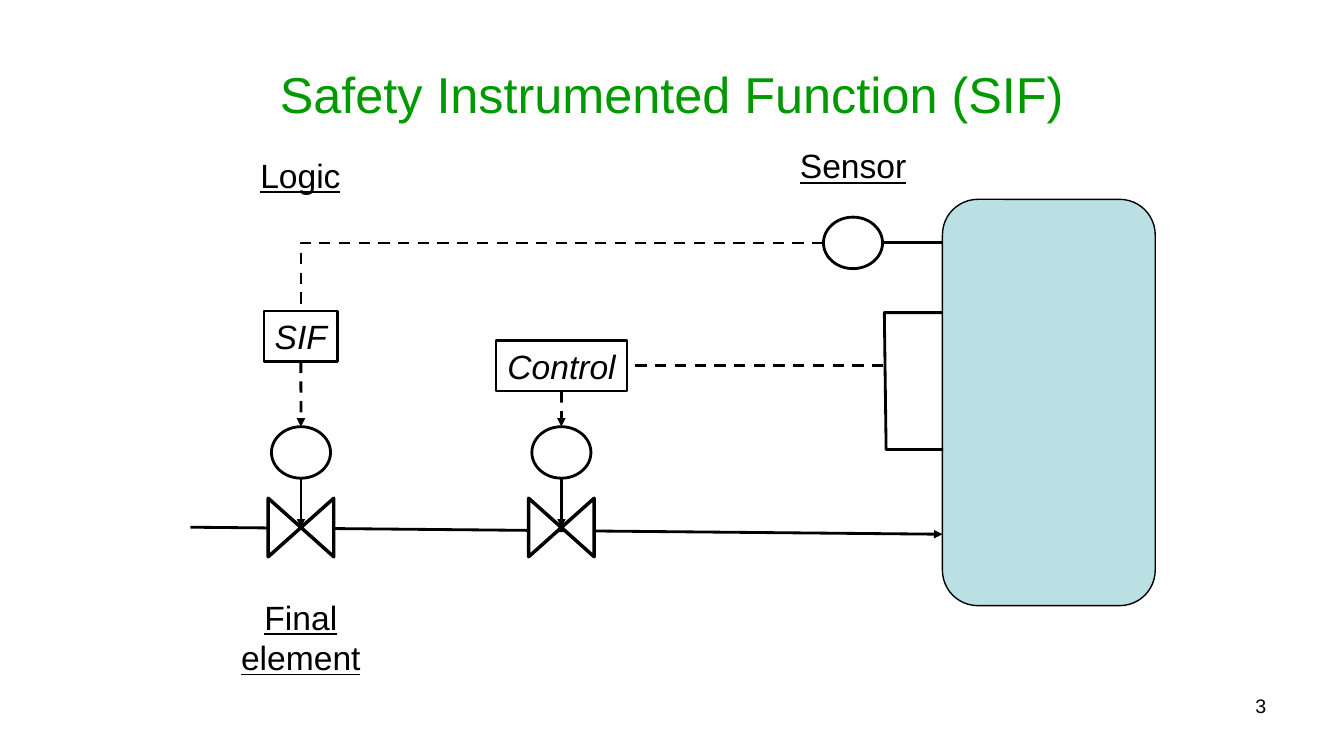
from lxml import etree
from pptx import Presentation
from pptx.dml.color import RGBColor
from pptx.enum.dml import MSO_LINE
from pptx.enum.shapes import MSO_CONNECTOR as CXN, MSO_SHAPE as SHAPE
from pptx.enum.text import MSO_ANCHOR as ANCHOR, MSO_AUTO_SIZE as AUTO, PP_ALIGN as ALIGN
from pptx.oxml.ns import qn
from pptx.util import Pt

BLACK, WHITE, GREEN, TEAL = "000000", "FFFFFF", "009900", "BBE0E3"


def rgb(code):
    return RGBColor.from_string(code)


class Diagram:
    """Holds the slide and its style, with one method per kind of element."""

    def __init__(self, slide, font="Arial", ink=BLACK):
        self.s, self.font, self.ink = slide, font, ink

    def set_text(self, sp, text, size=24, color=None, align=ALIGN.CENTER, italic=None, underline=None):
        tf = sp.text_frame
        tf.text = text
        p = tf.paragraphs[0]
        p.alignment = align
        f = p.runs[0].font
        f.name, f.size, f.italic, f.underline = self.font, Pt(size), italic, underline
        f.color.rgb = rgb(color or self.ink)
        return tf

    def title(self, text, x, y, w, h):
        sp = self.s.shapes.title
        sp.left, sp.top, sp.width, sp.height = Pt(x), Pt(y), Pt(w), Pt(h)
        tf = self.set_text(sp, text, 36, GREEN)
        tf.vertical_anchor = ANCHOR.MIDDLE

    def text(self, text, x, y, w, h, wrap=False, **style):
        sp = self.s.shapes.add_textbox(Pt(x), Pt(y), Pt(w), Pt(h))
        tf = self.set_text(sp, text, **style)
        tf.word_wrap, tf.auto_size = wrap, AUTO.SHAPE_TO_FIT_TEXT

    def outline(self, sp, width, fill=None):
        sp.shadow.inherit = False
        sp.line.color.rgb, sp.line.width = rgb(self.ink), Pt(width)
        if fill:
            sp.fill.solid()
            sp.fill.fore_color.rgb = rgb(fill)
        else:
            sp.fill.background()
        return sp

    def shape(self, kind, x, y, w, h, width=2, fill=WHITE):
        sp = self.s.shapes.add_shape(kind, Pt(x), Pt(y), Pt(w), Pt(h))
        return self.outline(sp, width, fill)

    def box(self, text, x, y, w, h, wrap=True):
        sp = self.shape(SHAPE.RECTANGLE, x, y, w, h, 1.75, None)
        tf = self.set_text(sp, text, italic=True)
        tf.word_wrap, tf.auto_size = wrap, AUTO.SHAPE_TO_FIT_TEXT
        return sp

    def polyline(self, points, width=2):
        start, *rest = [(Pt(x), Pt(y)) for x, y in points]
        builder = self.s.shapes.build_freeform(*start)
        builder.add_line_segments(rest, close=False)
        self.outline(builder.convert_to_shape(), width)

    def line(self, x1, y1, x2, y2, dash=False, arrow=False, kind=CXN.STRAIGHT):
        c = self.s.shapes.add_connector(kind, Pt(x1), Pt(y1), Pt(x2), Pt(y2))
        c.line.color.rgb, c.line.width = rgb(self.ink), Pt(2)
        if dash:
            c.line.dash_style = MSO_LINE.DASH
        props = c._element.spPr
        if arrow:
            etree.SubElement(props.find(qn("a:ln")), qn("a:tailEnd"), type="triangle")
        etree.SubElement(props, qn("a:effectLst"))
        return c

    def corner(self, x1, y1, x2, y2):
        c = self.line(x1, y1, x2, y2, dash=True, kind=CXN.ELBOW)
        c._element.spPr.find(qn("a:prstGeom")).set("prst", "bentConnector2")


def main():
    prs = Presentation()
    prs.slide_width, prs.slide_height = Pt(960), Pt(540)
    d = Diagram(prs.slides.add_slide(prs.slide_layouts[5]))
    sif_x, control_x, vessel_x = 215, 401, 673.2
    bulb_w, bulb_h, bulb_y = 42.2, 36.8, 304.8
    valve_w, valve_h, valve_y = 41.8, 46.8, 376.8

    # Title and page number
    d.title("Safety Instrumented Function (SIF)", 48, 21.6, 864, 90)
    d.text("3", 687.6, 491.8, 223.9, 37.4, wrap=True, size=14, align=ALIGN.RIGHT)

    # Process line and vessel
    d.line(136, 376.6, vessel_x, 381.6, arrow=True)
    d.shape(SHAPE.ROUNDED_RECTANGLE, vessel_x, 142.4, 152, 290.2, 1, TEAL)
    d.polyline([(vessel_x, 223.3), (631.7, 223.3), (633, 321.1), (673.7, 321.1)])

    # Logic boxes
    sif = d.box("SIF", sif_x - 26.2, 222, 52.2, 36.4, wrap=False)
    control = d.box("Control", control_x - 46.6, 243.1, 93.4, 36.4)

    # Valve with actuator under each logic box
    for x, logic, logic_end in ((sif_x, sif, 258.4), (control_x, control, 279.5)):
        valve = d.shape(SHAPE.FLOWCHART_COLLATE, x - valve_w / 2, valve_y - valve_h / 2,
                        valve_w, valve_h, 2.5)
        valve.rotation = 90
        d.shape(SHAPE.OVAL, x - bulb_w / 2, bulb_y, bulb_w, bulb_h)
        d.line(x, bulb_y + bulb_h, x, valve_y, arrow=True)
        signal = d.line(x, logic_end, x, bulb_y, dash=True, arrow=True)
        signal.begin_connect(logic, 2)

    # Sensor and its signals
    sensor_x, sensor_y = 588.2, 173.5
    d.shape(SHAPE.OVAL, sensor_x, sensor_y - bulb_h / 2, bulb_w, bulb_h)
    d.line(vessel_x, sensor_y, sensor_x + bulb_w, sensor_y)
    d.corner(sensor_x, sensor_y, sif_x, 222)
    level = d.line(631, 261.3, control_x + 46.8, 261.3, dash=True)
    level.end_connect(control, 3)

    # Labels
    d.text("Sensor", 563.6, 100.3, 91.6, 36.4, underline=True)
    d.text("Final element", 157.9, 422.8, 114, 65.4, wrap=True, underline=True)
    d.text("Logic", 178.4, 106.9, 72.4, 36.4, underline=True)

    prs.save("out.pptx")


if __name__ == "__main__":
    main()
